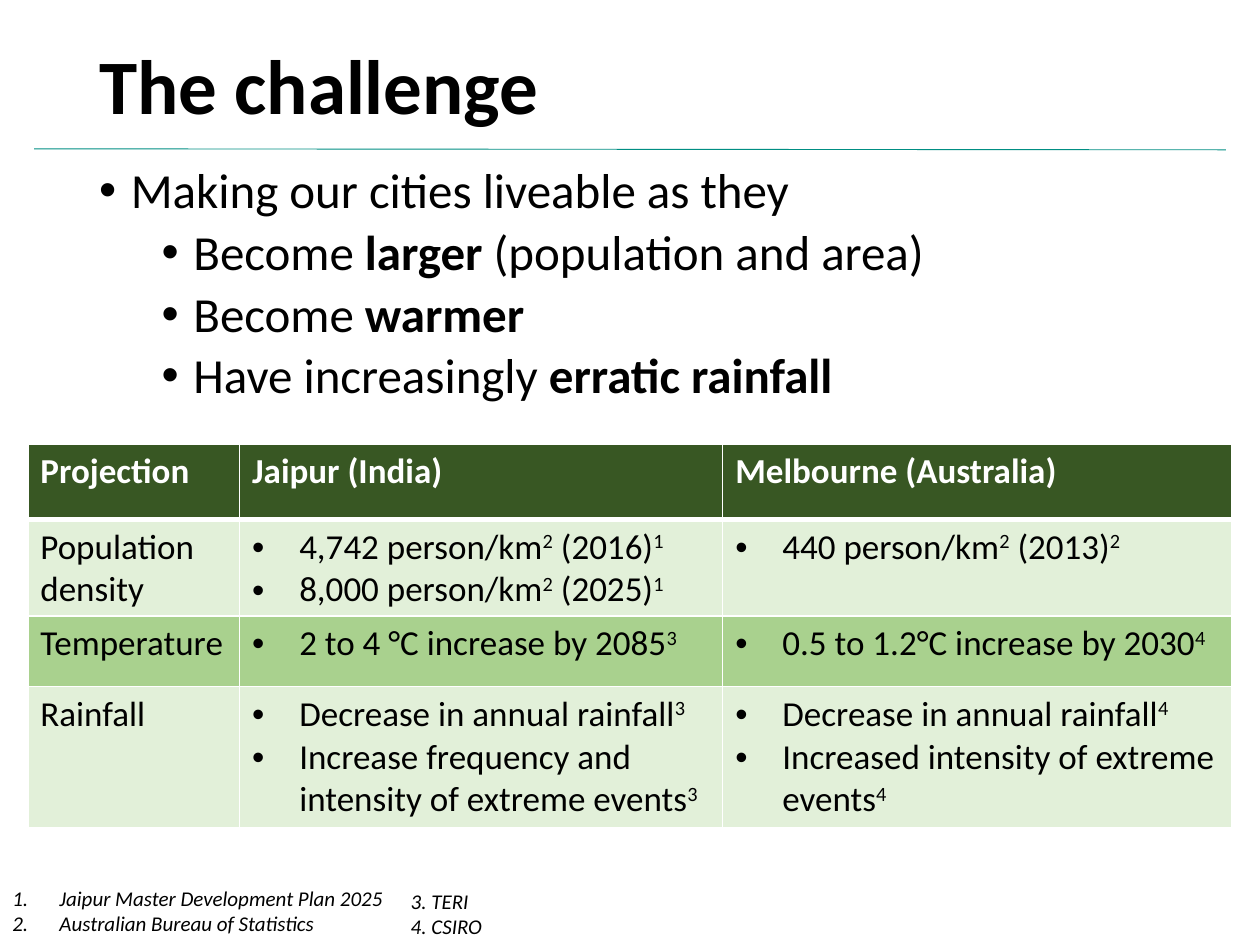
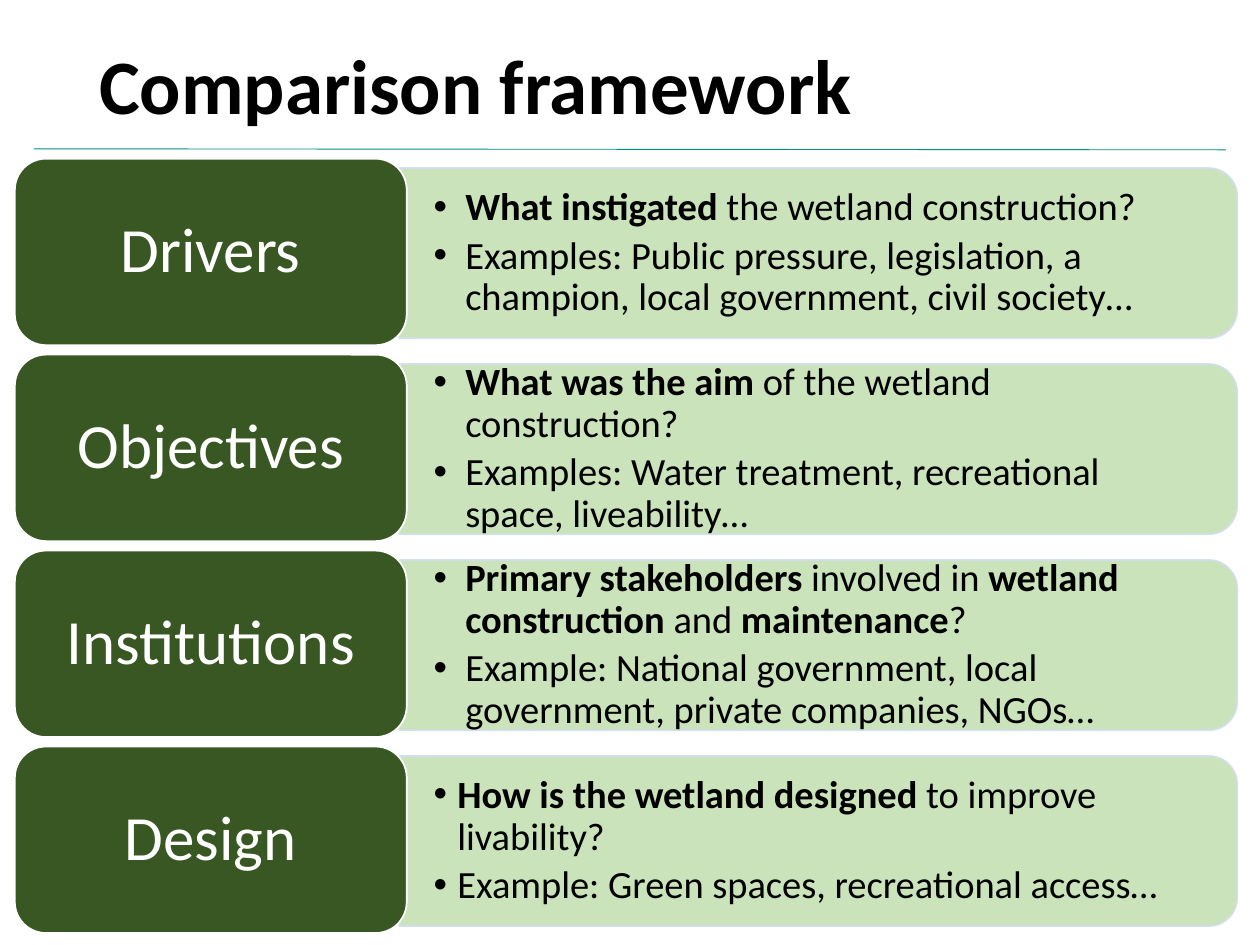
from dataclasses import dataclass
from typing import NamedTuple

from lxml.etree import SubElement
from pptx import Presentation
from pptx.dml.color import RGBColor
from pptx.enum.shapes import MSO_CONNECTOR, MSO_SHAPE
from pptx.enum.text import MSO_ANCHOR as Anchor, PP_ALIGN as Align
from pptx.oxml import parse_xml
from pptx.oxml.ns import nsdecls, qn
from pptx.util import Cm, Pt


@dataclass(frozen=True)
class Theme:
    font: str = "Calibri"
    ink: str = "000000"
    white: str = "FFFFFF"
    rule: str = "008E83"
    dark: str = "385723"
    pale: str = "E2F0D9"
    medium: str = "A9D18E"
    panel: str = "C5E0B4"
    panel_line: str = "D2DEEF"
    title_size: int = 44
    label_size: int = 36
    body_size: int = 28
    panel_size: int = 22
    table_size: int = 20
    note_size: int = 12


THEME = Theme()


class Run(NamedTuple):
    text: str
    bold: bool = False
    raised: bool = False


class Line(NamedTuple):
    """One paragraph; hang is the bullet indent and margin the text indent, in cm."""
    runs: tuple[Run, ...]
    bullet: str = ""
    margin: float = 0
    hang: float = 0
    before: float = 0
    after: float = 0


class Style(NamedTuple):
    size: int
    color: str = THEME.ink
    bold: bool = False
    italic: bool = False
    spacing: float = 1.0
    align: Align = Align.LEFT


class Box(NamedTuple):
    """Left, top, width and height in cm."""
    left: float
    top: float
    width: float
    height: float

    def lengths(self) -> tuple:
        return tuple(Cm(value) for value in self)


class Topic(NamedTuple):
    label: str
    question: tuple[Run, ...]
    examples: str
    hang: float = 0.64


TITLE_BOX = Box(1.75, 0.81, 21.89, 1.98)
CHALLENGE_BOX = Box(1.75, 3.23, 21.89, 13.94)
FIRST_LABEL = Box(0.3, 3.2, 7.9, 3.76)
FIRST_PANEL = Box(8.05, 3.39, 16.89, 3.43)
TOPIC_PITCH = 3.95
PANEL_TEXT_INSET = 0.18
NUMBERED = "1."


def plain(text: str) -> Run:
    return Run(text)


def bold(text: str) -> Run:
    return Run(text, bold=True)


def raised(text: str) -> Run:
    return Run(text, raised=True)


def item(*runs: Run, bullet: str = "•") -> Line:
    return Line(runs, bullet, margin=0.95, hang=0.95)


def point(*runs: Run) -> Line:
    return Line(runs, "•", margin=1.9, hang=0.64, before=5)


def words(text: str) -> Line:
    return Line((plain(text),))


CHALLENGES = [
    Line((plain("Making our cities liveable as they"),), "•", margin=0.64, hang=0.64),
    point(plain("Become "), bold("larger"), plain(" (population and area)")),
    point(plain("Become "), bold("warmer")),
    point(plain("Have increasingly "), bold("erratic rainfall")),
]


def density(value: str, year: str, source: str) -> Line:
    return item(plain(f"{value} person/km"), raised("2"), plain(f" ({year})"), raised(source))


def sourced(text: str, source: str) -> Line:
    return item(plain(text), raised(source))


PROJECTIONS = [
    [[words("Projection")], [words("Jaipur (India)")], [words("Melbourne (Australia)")]],
    [
        [words("Population density")],
        [density("4,742", "2016", "1"), density("8,000", "2025", "1")],
        [density("440", "2013", "2")],
    ],
    [
        [words("Temperature")],
        [sourced("2 to 4 °C increase by 2085", "3")],
        [sourced("0.5 to 1.2°C increase by 2030", "4")],
    ],
    [
        [words("Rainfall")],
        [
            sourced("Decrease in annual rainfall", "3"),
            sourced("Increase frequency and intensity of extreme events", "3"),
        ],
        [
            sourced("Decrease in annual rainfall", "4"),
            sourced("Increased intensity of extreme events", "4"),
        ],
    ],
]
COLUMN_WIDTHS = (4.27, 9.74, 10.27)
ROW_HEIGHTS = (1.52, 1.93, 1.42, 2.84)

TOPICS = [
    Topic(
        "Drivers",
        (bold("What instigated"), plain(" the wetland construction?")),
        "Examples: Public pressure, legislation, a champion, local government, civil society…",
    ),
    Topic(
        "Objectives",
        (bold("What was the aim "), plain("of the wetland construction?")),
        "Examples: Water treatment, recreational space, liveability…",
    ),
    Topic(
        "Institutions",
        (bold("Primary stakeholders "), plain("involved in "), bold("wetland construction "),
         plain("and"), bold(" maintenance"), plain("?")),
        "Example: National government, local government, private companies, NGOs…",
    ),
    Topic(
        "Design",
        (bold("How is the wetland designed "), plain("to improve livability?")),
        "Example: Green spaces, recreational access…",
        hang=0.48,
    ),
]


def rgb(color: str) -> RGBColor:
    return RGBColor.from_string(color)


def set_bullet(paragraph, line: Line) -> None:
    properties = paragraph._p.get_or_add_pPr()
    properties.set("marL", str(Cm(line.margin)))
    properties.set("indent", str(-Cm(line.hang)))
    if line.bullet == NUMBERED:
        SubElement(properties, qn("a:buAutoNum"), type="arabicPeriod")
    else:
        SubElement(properties, qn("a:buFont"), typeface="Arial")
        SubElement(properties, qn("a:buChar"), char=line.bullet)


def write(frame, lines: list[Line], style: Style) -> None:
    for index, line in enumerate(lines):
        paragraph = frame.add_paragraph() if index else frame.paragraphs[0]
        if line.bullet:
            set_bullet(paragraph, line)
        paragraph.alignment = style.align
        paragraph.line_spacing = style.spacing
        paragraph.space_before = Pt(line.before)
        paragraph.space_after = Pt(line.after)
        for part in line.runs:
            run = paragraph.add_run()
            run.text = part.text
            run.font.name = THEME.font
            run.font.size = Pt(style.size)
            run.font.bold = style.bold or part.bold
            run.font.italic = style.italic
            run.font.color.rgb = rgb(style.color)
            if part.raised:
                run.font._element.set("baseline", "30000")


def set_insets(frame, across: float, down: float) -> None:
    frame.margin_left = frame.margin_right = Cm(across)
    frame.margin_top = frame.margin_bottom = Cm(down)


def add_text(slide, box: Box, lines: list[Line], style: Style, anchor: Anchor = Anchor.TOP):
    frame = slide.shapes.add_textbox(*box.lengths()).text_frame
    frame.word_wrap = True
    frame.vertical_anchor = anchor
    write(frame, lines, style)
    return frame


def add_block(slide, kind: MSO_SHAPE, box: Box, fill: str, line: str):
    shape = slide.shapes.add_shape(kind, *box.lengths())
    shape.shadow.inherit = False
    shape.fill.solid()
    shape.fill.fore_color.rgb = rgb(fill)
    shape.line.color.rgb = rgb(line)
    shape.line.width = Pt(1)
    return shape


def add_titled_slide(presentation, title: str):
    slide = presentation.slides.add_slide(presentation.slide_layouts[6])
    rule = slide.shapes.add_connector(
        MSO_CONNECTOR.STRAIGHT, Cm(0.69), Cm(3), Cm(24.71), Cm(3.02))
    rule.line.color.rgb = rgb(THEME.rule)
    rule.line.width = Pt(0.5)
    SubElement(rule._element.spPr, qn("a:effectLst"))
    add_text(slide, TITLE_BOX, [words(title)],
             Style(THEME.title_size, bold=True, spacing=0.9), Anchor.MIDDLE)
    return slide


def set_borders(cell, top: float, bottom: float) -> None:
    widths = {"lnL": 1, "lnR": 1, "lnT": top, "lnB": bottom}
    properties = cell._tc.get_or_add_tcPr()
    for position, (side, width) in enumerate(widths.items()):
        properties.insert(position, parse_xml(
            f'<a:{side} {nsdecls("a")} w="{Pt(width)}"><a:solidFill>'
            f'<a:srgbClr val="{THEME.white}"/></a:solidFill></a:{side}>'))


def add_projection_table(slide) -> None:
    box = Box(0.56, 8.95, sum(COLUMN_WIDTHS), sum(ROW_HEIGHTS))
    table = slide.shapes.add_table(
        len(ROW_HEIGHTS), len(COLUMN_WIDTHS), *box.lengths()).table
    table.first_row = table.horz_banding = False
    for column, width in zip(table.columns, COLUMN_WIDTHS):
        column.width = Cm(width)
    fills = (THEME.dark, THEME.pale, THEME.medium, THEME.pale)
    header = Style(THEME.table_size, THEME.white, bold=True)
    for number, (row, height, contents) in enumerate(zip(table.rows, ROW_HEIGHTS, PROJECTIONS)):
        row.height = Cm(height)
        for cell, lines in zip(row.cells, contents):
            cell.fill.solid()
            cell.fill.fore_color.rgb = rgb(fills[number])
            set_borders(cell, top=3 if number == 1 else 1, bottom=1 if number else 3)
            write(cell.text_frame, lines, Style(THEME.table_size) if number else header)


def add_panel(slide, box: Box) -> None:
    """Draw a panel with rounded right corners: an upright shape turned by 90 degrees."""
    shift = (box.width - box.height) / 2
    upright = Box(box.left + shift, box.top - shift, box.height, box.width)
    panel = add_block(slide, MSO_SHAPE.ROUND_2_SAME_RECTANGLE, upright,
                      THEME.panel, THEME.panel_line)
    panel.rotation = 90
    for color in panel._element.spPr.iter(qn("a:srgbClr")):
        SubElement(color, qn("a:alpha"), val="90000")


def add_topic(slide, topic: Topic, offset: float) -> None:
    panel = FIRST_PANEL._replace(top=FIRST_PANEL.top + offset)
    add_panel(slide, panel)
    text_box = Box(panel.left, panel.top + PANEL_TEXT_INSET,
                   panel.width - PANEL_TEXT_INSET, panel.height - 2 * PANEL_TEXT_INSET)
    lines = [Line(runs, "•", margin=topic.hang, hang=topic.hang, after=4)
             for runs in (topic.question, (plain(topic.examples),))]
    frame = add_text(slide, text_box, lines, Style(THEME.panel_size, spacing=0.9), Anchor.MIDDLE)
    set_insets(frame, 0.69, 0.35)

    label_box = FIRST_LABEL._replace(top=FIRST_LABEL.top + offset)
    label = add_block(slide, MSO_SHAPE.ROUNDED_RECTANGLE, label_box, THEME.dark, THEME.white)
    label.text_frame.vertical_anchor = Anchor.MIDDLE
    set_insets(label.text_frame, 0.38, 0.18)
    write(label.text_frame, [words(topic.label)],
          Style(THEME.label_size, THEME.white, spacing=0.9, align=Align.CENTER))


def build_challenge(presentation) -> None:
    slide = add_titled_slide(presentation, "The challenge")
    add_text(slide, CHALLENGE_BOX, CHALLENGES, Style(THEME.body_size, spacing=0.9))
    add_projection_table(slide)
    note = Style(THEME.note_size, italic=True)
    sources = ("Jaipur Master Development Plan 2025", "Australian Bureau of Statistics")
    add_text(slide, Box(0, 17.73, 16.71, 1.27),
             [item(plain(source), bullet=NUMBERED) for source in sources], note)
    add_text(slide, Box(8.03, 17.78, 6.93, 1.27), [words("3. TERI"), words("4. CSIRO")], note)


def build_framework(presentation) -> None:
    slide = add_titled_slide(presentation, "Comparison framework")
    for number, topic in enumerate(TOPICS):
        add_topic(slide, topic, number * TOPIC_PITCH)


def main() -> None:
    presentation = Presentation()
    presentation.slide_width, presentation.slide_height = Cm(25.4), Cm(19.05)
    build_challenge(presentation)
    build_framework(presentation)
    presentation.save("out.pptx")


if __name__ == "__main__":
    main()
